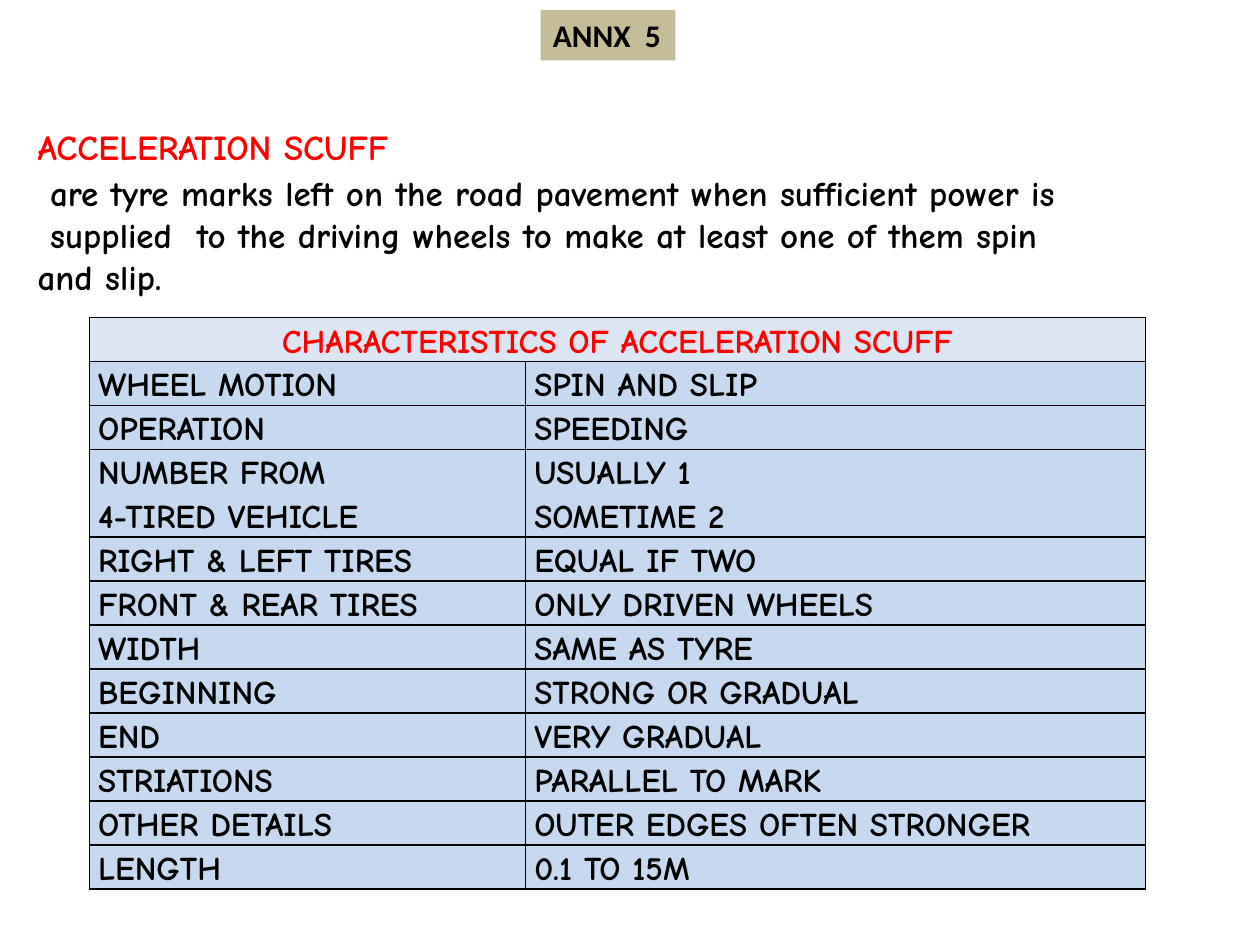
from lxml import etree
from pptx import Presentation, util as u
from pptx.dml.color import RGBColor
from pptx.enum import shapes, text
from pptx.oxml.ns import qn

WIDTH, HEIGHT = u.Inches(10), u.Inches(7.5)
COLUMNS, ROWS = 100, 75
HAND, PLAIN = "Comic Neue", "Calibri"
RED, BLACK = "FF0000", "000000"
TAN, PALE_BLUE, BLUE = "C4BD97", "DCE6F2", "C6D9F1"

TAG_BOX = (42.9, 0.8, 10.7, 4)
DEFINITION_BOX = (2, 9.5, 96.5, 14.6)
TABLE_BOX = (7.1, 25.2, 83.8, 45.3)
LABEL_SHARE = 0.413

HEADING = "ACCELERATION SCUFF"
DEFINITION = [
    ("are tyre marks left on the road pavement when sufficient power is", 1),
    ("supplied  to the driving wheels to make at least one of them spin", 1),
    ("and slip.", 0),
]
TABLE_TITLE = "CHARACTERISTICS OF ACCELERATION SCUFF"
CHARACTERISTICS = [
    (["WHEEL MOTION"], ["SPIN AND SLIP"]),
    (["OPERATION"], ["SPEEDING"]),
    (["NUMBER FROM", "4-TIRED VEHICLE"], ["USUALLY 1", "SOMETIME 2"]),
    (["RIGHT & LEFT TIRES"], ["EQUAL IF TWO"]),
    (["FRONT & REAR TIRES"], ["ONLY DRIVEN WHEELS"]),
    (["WIDTH"], ["SAME AS TYRE"]),
    (["BEGINNING"], ["STRONG OR GRADUAL"]),
    (["END"], ["VERY GRADUAL"]),
    (["STRIATIONS"], ["PARALLEL TO MARK"]),
    (["OTHER DETAILS"], ["OUTER EDGES OFTEN STRONGER"]),
    (["LENGTH"], ["0.1 TO 15M"]),
]


def across(columns):
    """Turn grid columns into a length."""
    return round(WIDTH * columns / COLUMNS)


def down(rows):
    """Turn grid rows into a length."""
    return round(HEIGHT * rows / ROWS)


def place(box):
    """Turn a grid box into left, top, width and height."""
    left, top, width, height = box
    return across(left), down(top), across(width), down(height)


def color(code):
    """Turn a hex string into a colour."""
    return RGBColor.from_string(code)


def paint(item, code):
    """Fill a shape or cell with one colour."""
    item.fill.solid()
    item.fill.fore_color.rgb = color(code)


def add_para(frame, first, words, size, code, font=HAND):
    """Write one bold run as the first or next paragraph of a frame."""
    para = frame.paragraphs[0] if first else frame.add_paragraph()
    span = para.add_run()
    span.text = words
    span.font.size, span.font.name, span.font.bold = u.Pt(size), font, True
    span.font.color.rgb = color(code)
    return para


def add_borders(cell):
    """Draw a thin black line on each side of a cell."""
    properties = cell._tc.get_or_add_tcPr()
    for index, side in enumerate(("lnL", "lnR", "lnT", "lnB")):
        line = etree.Element(qn(f"a:{side}"), w=str(u.Pt(1)))
        fill = etree.SubElement(line, qn("a:solidFill"))
        etree.SubElement(fill, qn("a:srgbClr"), val=BLACK)
        properties.insert(index, line)


def fill_cell(cell, lines, code, background, align=text.PP_ALIGN.LEFT):
    """Write lines in a bordered, filled table cell."""
    cell.margin_left = cell.margin_right = u.Inches(0.07)
    cell.margin_top = cell.margin_bottom = 0
    for index, words in enumerate(lines):
        para = add_para(cell.text_frame, index == 0, words, 19, code)
        para.line_spacing, para.alignment = 1.15, align
    paint(cell, background)
    add_borders(cell)


def add_tag(page, box):
    """Place the annex tag."""
    tag = page.shapes.add_shape(shapes.MSO_SHAPE.RECTANGLE, *place(box))
    tag.shadow.inherit = False
    tag.line.fill.background()
    paint(tag, TAN)
    tag.text_frame.word_wrap = False
    para = add_para(tag.text_frame, True, "ANNX  5", 18, BLACK, PLAIN)
    para.alignment = text.PP_ALIGN.LEFT


def add_definition(page, box):
    """Place the red heading and the definition below it."""
    frame = page.shapes.add_textbox(*place(box)).text_frame
    frame.word_wrap = True
    add_para(frame, True, HEADING, 20, RED)
    for index, (words, indent) in enumerate(DEFINITION):
        para = add_para(frame, False, words, 20, BLACK)
        para._p.get_or_add_pPr().set("marL", str(across(indent)))
        if index == 0:
            para.space_before = u.Pt(2)


def add_characteristics(page, box):
    """Place the table, with row heights that follow their line counts."""
    left, top, width, height = place(box)
    counts = [1] + [len(label) for label, value in CHARACTERISTICS]
    table = page.shapes.add_table(len(counts), 2, left, top, width, height).table
    table.columns[0].width = round(width * LABEL_SHARE)
    table.columns[1].width = width - table.columns[0].width
    for row, count in zip(table.rows, counts):
        row.height = round(height * count / sum(counts))
    table.cell(0, 0).merge(table.cell(0, 1))
    fill_cell(table.cell(0, 0), [TABLE_TITLE], RED, PALE_BLUE, text.PP_ALIGN.CENTER)
    fill_cell(table.cell(0, 1), [], RED, PALE_BLUE)
    for number, pair in enumerate(CHARACTERISTICS, 1):
        for column, lines in enumerate(pair):
            fill_cell(table.cell(number, column), lines, BLACK, BLUE)


def main():
    """Build the slide and save the deck."""
    deck = Presentation()
    deck.slide_width, deck.slide_height = WIDTH, HEIGHT
    page = deck.slides.add_slide(deck.slide_layouts[6])
    add_characteristics(page, TABLE_BOX)
    add_definition(page, DEFINITION_BOX)
    add_tag(page, TAG_BOX)
    deck.save("out.pptx")


if __name__ == "__main__":
    main()
